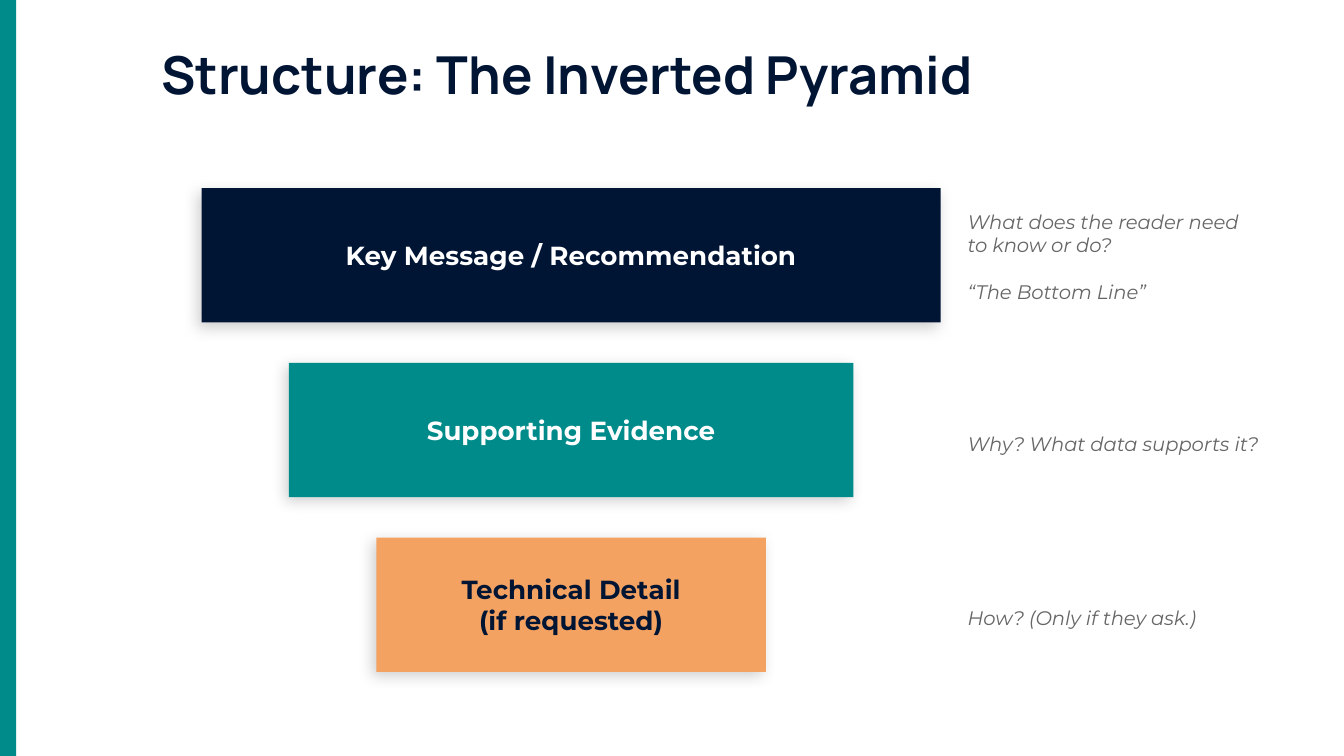
from dataclasses import dataclass

from lxml import etree
from pptx import Presentation
from pptx import util as u
from pptx.dml.color import RGBColor
from pptx.enum import shapes, text
from pptx.oxml.ns import qn

PX = u.Inches(1) // 200  # 200 px to the inch
SLIDE_WIDTH, SLIDE_HEIGHT = 2000, 1125


@dataclass(frozen=True)
class Theme:
    navy: str = "001434"
    teal: str = "008B8B"
    orange: str = "F4A261"
    white: str = "FFFFFF"
    grey: str = "666666"
    heading_font: str = "Manrope"
    body_font: str = "Montserrat"
    title_size: float = 28
    tier_size: float = 14
    note_size: float = 10.5
    note_gap: float = 12.8


THEME = Theme()


def px(*lengths):
    return [length * PX for length in lengths]


def write_text(shape, lines, *, size, color, font=THEME.body_font, bold=False,
               italic=False, align=text.PP_ALIGN.LEFT, gaps=None):
    """Fill a shape with one paragraph per line; gaps maps line index to space before."""
    frame = shape.text_frame
    frame.word_wrap = True
    frame.vertical_anchor = text.MSO_ANCHOR.MIDDLE
    frame.margin_left = frame.margin_right = frame.margin_top = frame.margin_bottom = 0
    for index, line in enumerate(lines):
        paragraph = frame.add_paragraph() if index else frame.paragraphs[0]
        paragraph.alignment = align
        if gaps and index in gaps:
            paragraph.space_before = u.Pt(gaps[index])
        run = paragraph.add_run()
        run.text = line
        run.font.name = font
        run.font.size = u.Pt(size)
        run.font.bold = bold
        run.font.italic = italic
        run.font.color.rgb = RGBColor.from_string(color)


def add_rectangle(slide, left, top, width, height, fill):
    shape = slide.shapes.add_shape(shapes.MSO_SHAPE.RECTANGLE, *px(left, top, width, height))
    shape.shadow.inherit = False
    shape.fill.solid()
    shape.fill.fore_color.rgb = RGBColor.from_string(fill)
    shape.line.fill.background()
    return shape


def add_text_box(slide, left, top, width, height, lines, **style):
    box = slide.shapes.add_textbox(*px(left, top, width, height))
    write_text(box, lines, **style)


def add_soft_shadow(shape):
    effects = shape._element.spPr.find(qn("a:effectLst"))
    shadow = etree.SubElement(effects, qn("a:outerShdw"), blurRad=str(u.Pt(8)),
                              dist=str(u.Pt(3)), dir=str(135 * 60000),
                              algn="bl", rotWithShape="0")
    color = etree.SubElement(shadow, qn("a:srgbClr"), val="000000")
    etree.SubElement(color, qn("a:alpha"), val="18000")


def add_pyramid(slide):
    tiers = [
        (["Key Message / Recommendation"], THEME.navy, THEME.white),
        (["Supporting Evidence"], THEME.teal, THEME.white),
        (["Technical Detail", "(if requested)"], THEME.orange, THEME.navy),
    ]
    left, top, width, height = 300, 280, 1100, 200
    inset, pitch = 130, 260
    for level, (lines, fill, color) in enumerate(tiers):
        tier = add_rectangle(slide, left + level * inset, top + level * pitch,
                             width - 2 * level * inset, height, fill)
        add_soft_shadow(tier)
        write_text(tier, lines, size=THEME.tier_size, color=color, bold=True,
                   align=text.PP_ALIGN.CENTER)


def add_notes_column(slide):
    notes = [
        (312, 452, ["What does the reader need", "to know or do?", "“The Bottom Line”"]),
        (590, 500, ["Why? What data supports it?"]),
        (850, 500, ["How? (Only if they ask.)"]),
    ]
    for top, width, lines in notes:
        add_text_box(slide, 1440, top, width, 140, lines, size=THEME.note_size,
                     color=THEME.grey, italic=True, gaps={2: THEME.note_gap})


def main():
    presentation = Presentation()
    presentation.slide_width, presentation.slide_height = px(SLIDE_WIDTH, SLIDE_HEIGHT)
    slide = presentation.slides.add_slide(presentation.slide_layouts[6])
    slide.background.fill.solid()
    slide.background.fill.fore_color.rgb = RGBColor.from_string(THEME.white)
    add_rectangle(slide, 0, 0, 24, SLIDE_HEIGHT, THEME.teal)
    add_text_box(slide, 240, 60, 1400, 100, ["Structure: The Inverted Pyramid"],
                 size=THEME.title_size, color=THEME.navy, font=THEME.heading_font, bold=True)
    add_pyramid(slide)
    add_notes_column(slide)
    presentation.save("out.pptx")


if __name__ == "__main__":
    main()
